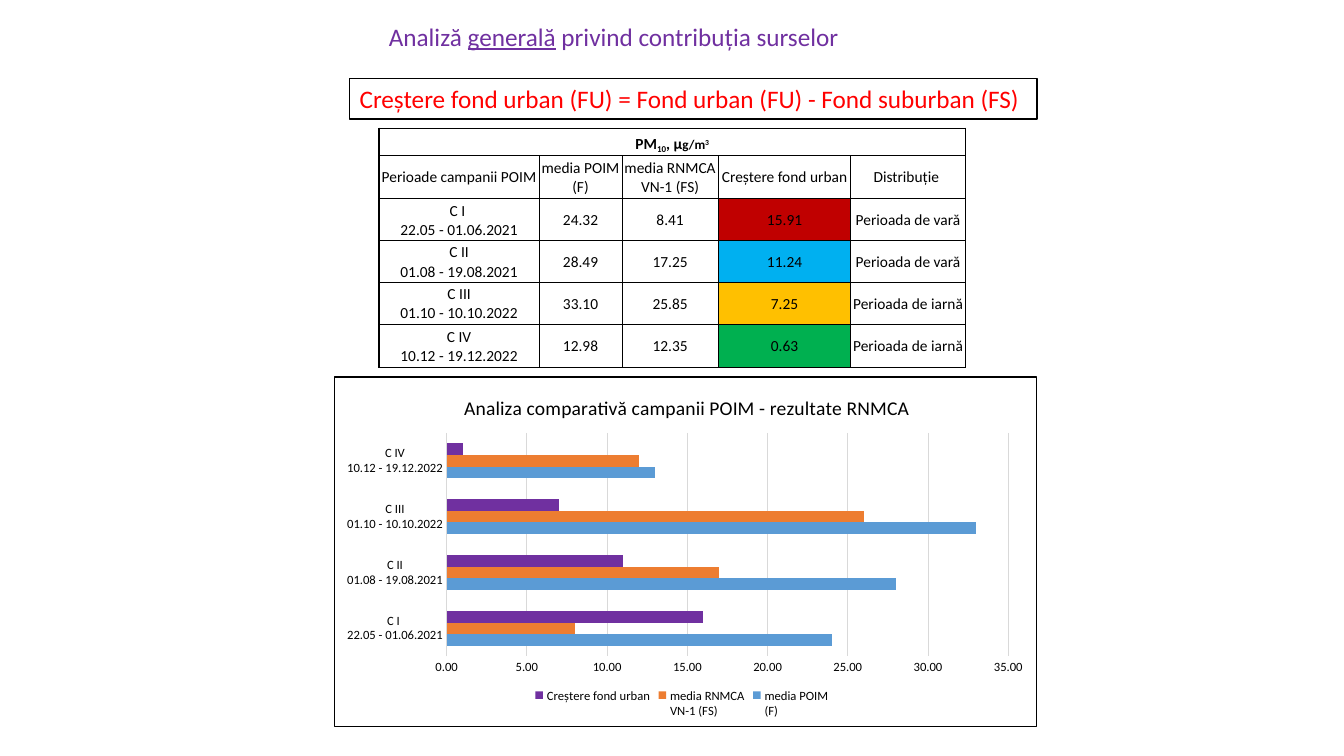
from typing import NamedTuple

from lxml.etree import SubElement
from pptx import Presentation
from pptx.chart.data import CategoryChartData
from pptx.dml.color import RGBColor
from pptx.enum.chart import XL_CHART_TYPE as ChartType, XL_LEGEND_POSITION as LegendPosition
from pptx.enum.chart import XL_TICK_MARK as TickMark
from pptx.enum.shapes import MSO_SHAPE as Preset
from pptx.enum.text import MSO_ANCHOR as Anchor, MSO_AUTO_SIZE as AutoSize, PP_ALIGN as Align
from pptx.oxml import parse_xml
from pptx.oxml.ns import nsdecls, qn
from pptx.util import Pt

FONT = "Calibri"
BLACK, WHITE, RED, PURPLE, GRID = "000000", "FFFFFF", "FF0000", "7030A0", "D9D9D9"


class Span(NamedTuple):
    text: str
    size: float = 11
    color: str = BLACK
    bold: bool = False
    underline: bool = False
    baseline: int = 0


class Campaign(NamedTuple):
    period: str
    urban: float
    suburban: float
    increase: float
    color: str
    season: str


class Series(NamedTuple):
    name: str
    field: str
    color: str


CAMPAIGNS = [
    Campaign("C I \n22.05 - 01.06.2021", 24.32, 8.41, 15.91, "C00000", "Perioada de vară"),
    Campaign("C II\n01.08 - 19.08.2021", 28.49, 17.25, 11.24, "00B0F0", "Perioada de vară"),
    Campaign("C III\n01.10 - 10.10.2022", 33.10, 25.85, 7.25, "FFC000", "Perioada de iarnă"),
    Campaign("C IV\n10.12 - 19.12.2022", 12.98, 12.35, 0.63, "00B050", "Perioada de iarnă"),
]
SERIES = [
    Series("media POIM\n(F)", "urban", "5B9BD5"),
    Series("media RNMCA\nVN-1 (FS)", "suburban", "ED7D31"),
    Series("Creștere fond urban", "increase", PURPLE),
]
TABLE_TITLE = [
    Span("PM", bold=True),
    Span("10", bold=True, baseline=-25),
    Span(", µ", bold=True),
    Span("g/m", 9.4, bold=True),
    Span("3", 9.4, bold=True, baseline=30),
]
COLUMN_WIDTHS = [114.5, 59, 69, 94.5, 82]
ROW_HEIGHTS = [19.5, 31, 30, 30, 30, 30.5]
INCREASE_COLUMN = 3


def rgb(color: str) -> RGBColor:
    return RGBColor.from_string(color)


def style_font(font, size: float, color: str = BLACK) -> None:
    font.name, font.size, font.color.rgb = FONT, Pt(size), rgb(color)


def add_spans(para, spans: list[Span]) -> None:
    for span in spans:
        run = para.add_run()
        run.text = span.text
        style_font(run.font, span.size, span.color)
        run.font.bold, run.font.underline = span.bold, span.underline
        if span.baseline:
            run.font._element.set("baseline", str(span.baseline * 1000))


def add_heading(page) -> None:
    box = page.shapes.add_textbox(Pt(270.7), Pt(11.5), Pt(338), Pt(29))
    box.text_frame.word_wrap = False
    box.text_frame.auto_size = AutoSize.SHAPE_TO_FIT_TEXT
    add_spans(box.text_frame.paragraphs[0], [
        Span("Analiză ", 18, PURPLE),
        Span("generală", 18, PURPLE, underline=True),
        Span(" privind contribuția surselor", 18, PURPLE),
    ])


def add_formula(page) -> None:
    box = page.shapes.add_shape(Preset.RECTANGLE, Pt(249.8), Pt(56), Pt(491), Pt(29))
    box.shadow.inherit = False
    box.fill.solid()
    box.fill.fore_color.rgb = rgb(WHITE)
    box.line.color.rgb, box.line.width = rgb(BLACK), Pt(1)
    frame = box.text_frame
    frame.word_wrap, frame.auto_size = True, AutoSize.SHAPE_TO_FIT_TEXT
    frame.paragraphs[0].alignment = Align.LEFT
    formula = "Creștere fond urban (FU) = Fond urban (FU) - Fond suburban (FS)"
    add_spans(frame.paragraphs[0], [Span(formula, 18, RED)])


def set_borders(cell, outer: dict[str, bool]) -> None:
    """Draw 1 pt lines on the outer sides of the table and 0.5 pt lines inside."""
    properties = cell._tc.get_or_add_tcPr()
    for side, is_outer in outer.items():
        line = SubElement(properties, qn(f"a:ln{side}"), w=str(Pt(1 if is_outer else 0.5)))
        SubElement(SubElement(line, qn("a:solidFill")), qn("a:srgbClr"), val=BLACK)


def fill_cell(cell, paragraphs: list[list[Span]], anchor: Anchor, color: str | None) -> None:
    if color:
        cell.fill.solid()
        cell.fill.fore_color.rgb = rgb(color)
    else:
        cell.fill.background()
    cell.margin_left = cell.margin_right = cell.margin_top = Pt(0.7)
    cell.margin_bottom = Pt(0)
    cell.vertical_anchor = anchor
    frame = cell.text_frame
    for index, spans in enumerate(paragraphs):
        para = frame.add_paragraph() if index else frame.paragraphs[0]
        para.alignment = Align.CENTER
        add_spans(para, spans)


def add_campaign_table(page) -> None:
    rows = [["Perioade campanii POIM", *(series.name for series in SERIES), "Distribuție "]]
    for item in CAMPAIGNS:
        values = (f"{getattr(item, series.field):.2f}" for series in SERIES)
        rows.append([item.period, *values, item.season])
    row_count, column_count = len(ROW_HEIGHTS), len(COLUMN_WIDTHS)
    table = page.shapes.add_table(row_count, column_count, Pt(270.7), Pt(91.5),
                                  Pt(sum(COLUMN_WIDTHS)), Pt(sum(ROW_HEIGHTS))).table
    table.first_row = table.horz_banding = False
    for column, width in zip(table.columns, COLUMN_WIDTHS):
        column.width = Pt(width)
    for row, height in zip(table.rows, ROW_HEIGHTS):
        row.height = Pt(height)

    title = table.cell(0, 0)
    title.merge(table.cell(0, column_count - 1))
    set_borders(title, {"L": True, "R": True, "T": True, "B": False})
    fill_cell(title, [TABLE_TITLE], Anchor.BOTTOM, None)
    for r, texts in enumerate(rows, start=1):
        for c, text in enumerate(texts):
            cell = table.cell(r, c)
            set_borders(cell, {"L": c == 0, "R": c == column_count - 1,
                               "T": False, "B": r == row_count - 1})
            is_increase = r > 1 and c == INCREASE_COLUMN
            color = CAMPAIGNS[r - 2].color if is_increase else None
            fill_cell(cell, [[Span(part)] for part in text.split("\n")], Anchor.MIDDLE, color)


def set_layout(parent, position: int, **fractions: float) -> None:
    """Place a chart part at the given fractions of the chart area."""
    for old in parent.findall(qn("c:layout")):
        parent.remove(old)
    layout = parse_xml(f"<c:layout {nsdecls('c')}><c:manualLayout/></c:layout>")
    manual = layout[0]
    if parent.tag == qn("c:plotArea"):
        SubElement(manual, qn("c:layoutTarget"), val="inner")
    for axis in "xy":
        SubElement(manual, qn(f"c:{axis}Mode"), val="edge")
    for name, fraction in fractions.items():
        SubElement(manual, qn(f"c:{name}"), val=str(fraction))
    parent.insert(position, layout)


def add_comparison_chart(page) -> None:
    data = CategoryChartData(number_format="0.00")
    data.categories = [item.period for item in CAMPAIGNS]
    for series in SERIES:
        data.add_series(series.name, [round(getattr(item, series.field)) for item in CAMPAIGNS])
    chart = page.shapes.add_chart(ChartType.BAR_CLUSTERED, Pt(238.3), Pt(268.8),
                                  Pt(502.5), Pt(250.5), data).chart
    style_font(chart.font, 10)
    chart.has_title = True
    title = "Analiza comparativă campanii POIM - rezultate RNMCA"
    add_spans(chart.chart_title.text_frame.paragraphs[0], [Span(title, 14)])

    plot = chart.plots[0]
    plot.gap_width, plot.overlap, plot.vary_by_categories = 182, 0, False
    for bars, series in zip(plot.series, SERIES):
        bars.format.fill.solid()
        bars.format.fill.fore_color.rgb = rgb(series.color)

    periods, values = chart.category_axis, chart.value_axis
    for axis in (periods, values):
        axis.major_tick_mark = axis.minor_tick_mark = TickMark.NONE
        style_font(axis.tick_labels.font, 9)
    values.minimum_scale, values.maximum_scale, values.major_unit = 0, 35, 5
    values.tick_labels.number_format = "0.00"
    values.tick_labels.number_format_is_linked = False
    values.format.line.fill.background()
    for line in (periods.format.line, values.major_gridlines.format.line):
        line.color.rgb, line.width = rgb(GRID), Pt(0.75)

    chart.has_legend = True
    chart.legend.position, chart.legend.include_in_layout = LegendPosition.BOTTOM, False
    style_font(chart.legend.font, 9)

    body = chart.element.find(qn("c:chart"))
    set_layout(body.find(qn("c:title")), 1, x=0.18, y=0.04)
    set_layout(body.find(qn("c:plotArea")), 0, x=0.16, y=0.16, w=0.8, h=0.64)
    set_layout(body.find(qn("c:legend")), 1, x=0.28, y=0.91, w=0.43, h=0.09)
    body.addnext(parse_xml(
        f'<c:spPr {nsdecls("c", "a")}>'
        f'<a:solidFill><a:srgbClr val="{WHITE}"/></a:solidFill>'
        f'<a:ln w="{Pt(1)}"><a:solidFill><a:srgbClr val="{BLACK}"/></a:solidFill></a:ln></c:spPr>'))


def main() -> None:
    deck = Presentation()
    deck.slide_width, deck.slide_height = Pt(960), Pt(540)
    page = deck.slides.add_slide(deck.slide_layouts[6])
    add_formula(page)
    add_heading(page)
    add_campaign_table(page)
    add_comparison_chart(page)
    deck.save("out.pptx")


if __name__ == "__main__":
    main()
